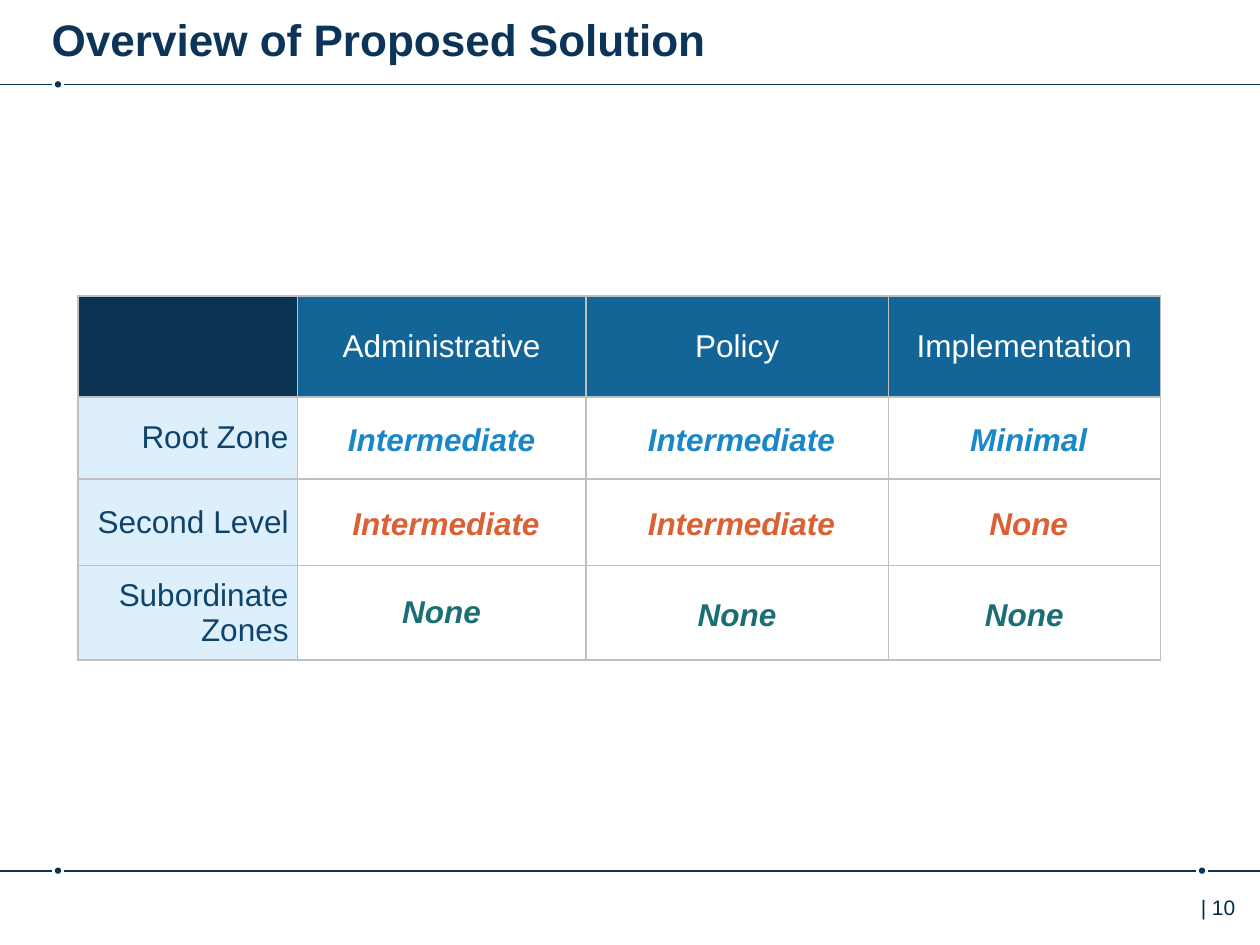
"""Build the overview slide with a table of impact by zone."""
from lxml.etree import SubElement
from pptx import Presentation
from pptx.dml.color import RGBColor as RGB
from pptx.enum.shapes import MSO_CONNECTOR as LINK, MSO_SHAPE as SHAPE
from pptx.enum.text import MSO_ANCHOR as ANCHOR, PP_ALIGN as ALIGN
from pptx.oxml.ns import qn
from pptx.util import Inches, Pt

TITLE = "Overview of Proposed Solution"
PAGE = "| 10"
HEADS = ["", "Administrative", "Policy", "Implementation"]
ROWS = [
    ("Root Zone", "blue", ["Intermediate", "Intermediate", "Minimal"]),
    ("Second Level", "orange", ["Intermediate", "Intermediate", "None"]),
    ("Subordinate Zones", "teal", ["None", "None", "None"]),
]
NUDGED = {(1, 2), (1, 3), (2, 1), (2, 2), (2, 3)}
TIGHT = (3, 1)
WIDTHS = [1.74, 2.29, 2.4, 2.16]
HEIGHTS = [0.8, 0.65, 0.69, 0.75]
RULES = [
    (0.67, [0.46], [(0, 0.41), (0.51, 10)]),
    (6.91, [0.46, 9.54], [(0, 0.41), (0.51, 9.49), (9.59, 10)]),
]
DOT = 0.05
COLORS = {
    "navy": "0C3458", "page": "002B49", "corner": "0A3251", "head": "136597",
    "pale": "DCEFFB", "white": "FFFFFF", "label": "0D436C", "grid": "BFBFBF",
    "blue": "1A87C9", "orange": "DB6033", "teal": "1B6F74",
}


def color(name):
    return RGB.from_string(COLORS[name])


def style(para, size, name, bold=False, italic=False):
    font = para.font
    font.name, font.size = "Arial", Pt(size)
    font.bold, font.italic = bold, italic
    font.color.rgb = color(name)


def add_text(slide, text, box, left, size, name, bold=False):
    frame = slide.shapes.add_textbox(*map(Inches, box)).text_frame
    frame.word_wrap = True
    frame.margin_left, frame.margin_right = Inches(left), 0
    para = frame.paragraphs[0]
    para.text = text
    style(para, size, name, bold)


def add_rule(slide, y, dots, spans):
    for x in dots:
        place = (x - DOT / 2, y - DOT / 2, DOT, DOT)
        dot = slide.shapes.add_shape(SHAPE.OVAL, *map(Inches, place))
        dot.shadow.inherit = False
        dot.fill.solid()
        dot.fill.fore_color.rgb = color("navy")
        dot.line.fill.background()
    for start, end in spans:
        ends = map(Inches, (start, y, end, y))
        line = slide.shapes.add_connector(LINK.STRAIGHT, *ends)
        line.line.color.rgb = color("navy")
        line.line.width = Pt(1)
        SubElement(line._element.spPr, qn("a:effectLst"))


def add_borders(cell):
    props = cell._tc.get_or_add_tcPr()
    for side in ("lnL", "lnR", "lnT", "lnB"):
        edge = SubElement(props, qn(f"a:{side}"), w=str(Pt(1)))
        fill = SubElement(edge, qn("a:solidFill"))
        SubElement(fill, qn("a:srgbClr"), val=COLORS["grid"])


def set_cell(cell, text, fill, ink, align, pad, shift=0, strong=False):
    add_borders(cell)
    cell.fill.solid()
    cell.fill.fore_color.rgb = color(fill)
    cell.vertical_anchor = ANCHOR.MIDDLE
    cell.margin_left, cell.margin_right = Inches(pad + shift), Inches(pad)
    cell.margin_top = cell.margin_bottom = Inches(0.04)
    para = cell.text_frame.paragraphs[0]
    para.text = text
    para.alignment = align
    style(para, 18, ink, strong, strong)
    return para


def add_grid(slide):
    box = (0.62, 2.35, sum(WIDTHS), sum(HEIGHTS))
    size = len(HEIGHTS), len(WIDTHS)
    table = slide.shapes.add_table(*size, *map(Inches, box)).table
    table.first_row = table.horz_banding = False
    for col, width in zip(table.columns, WIDTHS):
        col.width = Inches(width)
    for row, height in zip(table.rows, HEIGHTS):
        row.height = Inches(height)
    for c, head in enumerate(HEADS):
        fill = "head" if head else "corner"
        set_cell(table.cell(0, c), head, fill, "white", ALIGN.CENTER, 0.07)
    for r, (label, ink, values) in enumerate(ROWS, 1):
        set_cell(table.cell(r, 0), label, "pale", "label", ALIGN.RIGHT, 0.07)
        for c, value in enumerate(values, 1):
            shift = 0.07 if (r, c) in NUDGED else 0
            para = set_cell(table.cell(r, c), value, "white", ink,
                            ALIGN.CENTER, 0.03, shift, True)
            para.line_spacing = 1.0 if (r, c) == TIGHT else 1.15


def main():
    deck = Presentation()
    deck.slide_width, deck.slide_height = Inches(10), Inches(7.5)
    slide = deck.slides.add_slide(deck.slide_layouts[6])
    for rule in RULES:
        add_rule(slide, *rule)
    add_text(slide, PAGE, (9.29, 7.05, 0.87, 0.4), 0.24, 12, "page")
    add_text(slide, TITLE, (0.41, 0.05, 8.76, 0.49), 0, 25.2, "navy", True)
    add_grid(slide)
    deck.save("out.pptx")


if __name__ == "__main__":
    main()
